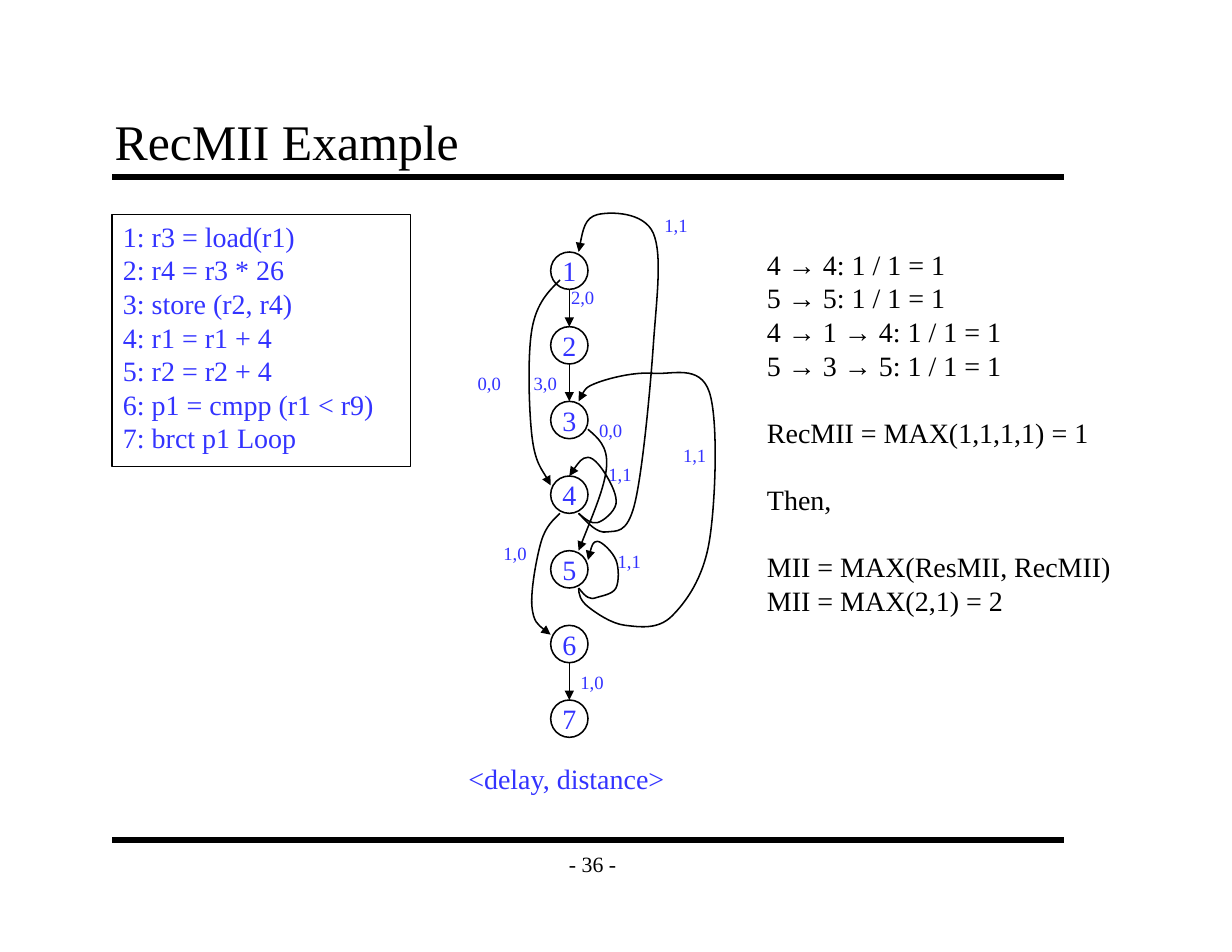
"""Build the RecMII example slide: loop code, dependence graph and MII result."""
import pptx
import pptx.dml.color
import pptx.enum.shapes
import pptx.enum.text
import pptx.oxml
import pptx.oxml.ns
import pptx.util

Pt = pptx.util.Pt
ALIGN = pptx.enum.text.PP_ALIGN
ANCHOR = pptx.enum.text.MSO_ANCHOR
SHAPE = pptx.enum.shapes.MSO_SHAPE
STRAIGHT = pptx.enum.shapes.MSO_CONNECTOR.STRAIGHT
BLACK, BLUE = "000000", "3333FF"


def write(shape, text, size, color, align=ALIGN.LEFT, anchor=ANCHOR.TOP, wrap=False):
    frame = shape.text_frame
    frame.text = text
    frame.word_wrap = wrap
    frame.vertical_anchor = anchor
    for para in frame.paragraphs:
        para.alignment = align
        for span in para.runs:
            span.font.size = Pt(size)
            span.font.name = "Times New Roman"
            span.font.color.rgb = pptx.dml.color.RGBColor.from_string(color)
    return frame


def outline(shape, width, arrow=False):
    shape.line.width = Pt(width)
    shape.line.color.rgb = pptx.dml.color.RGBColor.from_string(BLACK)
    if arrow:
        tail = pptx.oxml.parse_xml(f'<a:tailEnd {pptx.oxml.ns.nsdecls("a")} type="triangle"/>')
        shape.line._get_or_add_ln().append(tail)
    effects = pptx.oxml.parse_xml(f'<a:effectLst {pptx.oxml.ns.nsdecls("a")}/>')
    shape._element.spPr.append(effects)


deck = pptx.Presentation()
deck.slide_width, deck.slide_height = Pt(792), Pt(612)
page = deck.slides.add_slide(deck.slide_layouts[5])
shapes = page.shapes

for y in (114, 540):
    outline(shapes.add_connector(STRAIGHT, Pt(72), Pt(y), Pt(684), Pt(y)), 4)

number = shapes.add_textbox(Pt(354), Pt(540), Pt(54), Pt(30))
write(number, "- 36 -", 14, BLACK, ALIGN.CENTER, ANCHOR.MIDDLE)

title = shapes.title
title.left, title.top, title.width, title.height = Pt(66), Pt(66), Pt(612), Pt(48)
frame = write(title, "RecMII Example", 32, BLACK, anchor=ANCHOR.BOTTOM, wrap=True)
frame.auto_size = pptx.enum.text.MSO_AUTO_SIZE.NONE
frame.margin_left = frame.margin_right = Pt(7.75)
frame.margin_top = frame.margin_bottom = Pt(4.25)

code_lines = [
    "1: r3 = load(r1)",
    "2: r4 = r3 * 26",
    "3: store (r2, r4)",
    "4: r1 = r1 + 4",
    "5: r2 = r2 + 4",
    "6: p1 = cmpp (r1 < r9)",
    "7: brct p1 Loop",
]
result_lines = [
    "4 → 4: 1 / 1 = 1",
    "5 → 5: 1 / 1 = 1",
    "4 → 1 → 4: 1 / 1 = 1",
    "5 → 3 → 5: 1 / 1 = 1",
    "RecMII = MAX(1,1,1,1) = 1",
    "Then,",
    "MII = MAX(ResMII, RecMII)",
    "MII = MAX(2,1) = 2",
]
line_height = 21.6
texts = [
    (code_lines, 72, 137.5, 175.7, 158.4, BLUE, ()),
    (result_lines, 486, 155.5, 235.4, 244.8, BLACK, (4, 5, 6)),
    (["<delay, distance>"], 294, 486, 141.8, 28.8, BLUE, ()),
]
for lines, x, y, width, height, color, gaps in texts:
    box = shapes.add_textbox(Pt(x), Pt(y), Pt(width), Pt(height))
    frame = write(box, "\n".join(lines), 18, color)
    for index, para in enumerate(frame.paragraphs):
        para.line_spacing = Pt(line_height)
        if index in gaps:
            para.space_before = Pt(line_height)

code_border = shapes.add_shape(SHAPE.RECTANGLE, Pt(72), Pt(138), Pt(192), Pt(162))
code_border.fill.background()
outline(code_border, 1)

node_x, node_top, node_size, node_step = 354, 162, 24, 48
for index in range(7):
    node = shapes.add_shape(SHAPE.OVAL, Pt(node_x), Pt(node_top + index * node_step),
                            Pt(node_size), Pt(node_size))
    node.fill.background()
    outline(node, 1)
    write(node, str(index + 1), 18, BLUE, ALIGN.CENTER, ANCHOR.MIDDLE)

center_x = node_x + node_size / 2
for source in (1, 2, 6):
    end = node_top + source * node_step
    edge = shapes.add_connector(STRAIGHT, Pt(center_x), Pt(end - node_step + node_size),
                                Pt(center_x), Pt(end))
    outline(edge, 1, arrow=True)

curves = {
    "1 to 4": [(360, 180), (353, 187), (345, 194.5), (342, 211.5), (339, 228.5), (340, 263.5),
               (342, 280.5), (344, 297.5), (352, 307), (354, 312)],
    "3 to 5": [(378, 276), (384.5, 281.5), (391, 287), (390, 300), (389, 313), (380, 333.5),
               (372, 354)],
    "4 to 6": [(360, 330), (356, 334), (351, 338), (348, 348), (345, 358), (341, 380),
               (342, 390), (343, 400), (348.5, 404), (354, 408)],
    "4 to 1": [(372, 330), (378, 336.5), (384, 343), (390, 342), (396, 341), (403, 344),
               (408, 324), (413, 304), (418, 251), (420, 222), (422, 193), (426, 164),
               (420, 150), (414, 136), (392, 136), (384, 138), (376, 140), (374, 151),
               (372, 162)],
    "4 to 4": [(372, 330), (376, 333.5), (380, 337), (384, 336), (388, 335), (395, 329),
               (396, 324), (397, 319), (393, 311), (390, 306), (387, 301), (382, 294),
               (378, 294), (374, 294), (370, 300), (366, 306)],
    "5 to 5": [(372, 378), (374, 380.5), (376, 383), (378, 384), (380, 385), (381, 385),
               (384, 384), (387, 383), (394, 382), (396, 378), (398, 374), (398, 365),
               (396, 360), (394, 355), (387, 348), (384, 348), (381, 348), (379.5, 354),
               (378, 360)],
    "5 to 3": [(372, 378), (372, 382), (373, 386), (378, 390), (383, 394), (393, 401),
               (402, 402), (411, 403), (423, 405), (432, 396), (441, 387), (452, 372),
               (456, 348), (460, 324), (462, 270), (456, 252), (450, 234), (432, 241),
               (420, 240), (408, 239), (392, 243), (384, 246), (376, 249), (374, 253.5),
               (372, 258)],
}
for name, points in curves.items():
    points = [(Pt(x), Pt(y)) for x, y in points]
    builder = shapes.build_freeform(*points[0])
    builder.add_line_segments(points[1:], close=False)
    edge = builder.convert_to_shape()
    edge.name = f"Edge {name}"
    edge.fill.background()
    outline(edge, 1, arrow=True)
    segments = list(edge._element.iter(pptx.oxml.ns.qn("a:lnTo")))
    for first in range(0, len(segments), 3):
        bezier = pptx.oxml.parse_xml(f'<a:cubicBezTo {pptx.oxml.ns.nsdecls("a")}/>')
        segments[first].addprevious(bezier)
        for segment in segments[first:first + 3]:
            bezier.append(segment[0])
            segment.getparent().remove(segment)

edge_labels = [
    ("1,0", 316.5, 345), ("1,0", 366, 427.5), ("0,0", 300, 235.5), ("3,0", 336, 235.5),
    ("2,0", 360, 180), ("1,1", 420, 134), ("1,1", 432, 281.5), ("1,1", 390, 350),
    ("1,1", 384, 294), ("0,0", 378, 265.5),
]
for text, x, y in edge_labels:
    label = shapes.add_textbox(Pt(x), Pt(y), Pt(29.5), Pt(21.6))
    write(label, text, 12, BLUE)

deck.save("out.pptx")
